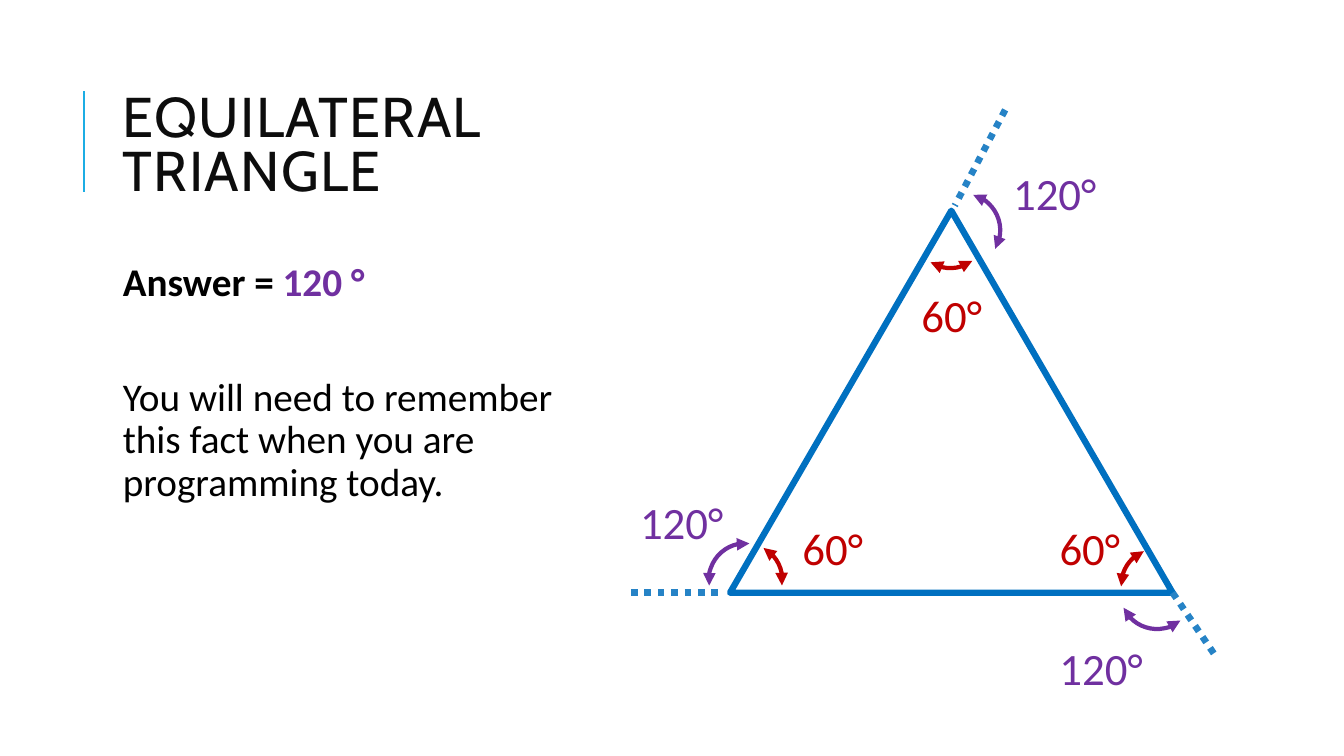
from lxml import etree
from pptx import Presentation
from pptx.dml.color import RGBColor
from pptx.enum.dml import MSO_LINE
from pptx.enum.shapes import MSO_CONNECTOR, MSO_SHAPE
from pptx.enum.text import MSO_ANCHOR, MSO_AUTO_SIZE
from pptx.oxml.ns import qn
from pptx.util import Inches, Pt

STRAIGHT = MSO_CONNECTOR.STRAIGHT
TRIANGLE, ARC = MSO_SHAPE.ISOSCELES_TRIANGLE, MSO_SHAPE.ARC
DOTTED = MSO_LINE.ROUND_DOT
TOP, MIDDLE = MSO_ANCHOR.TOP, MSO_ANCHOR.MIDDLE
FIT, FIXED = MSO_AUTO_SIZE.SHAPE_TO_FIT_TEXT, MSO_AUTO_SIZE.NONE

WHITE = RGBColor(0xFF, 0xFF, 0xFF)
BLACK = RGBColor(0, 0, 0)
INK = RGBColor(0x0D, 0x0D, 0x0D)
ACCENT = RGBColor(0x1C, 0xAD, 0xE4)
BLUE = RGBColor(0x00, 0x70, 0xC0)
DOTS = RGBColor(0x26, 0x83, 0xC6)
RED = RGBColor(0xC0, 0x00, 0x00)
PURPLE = RGBColor(0x70, 0x30, 0xA0)

ARC_SIZE = 0.73
ARC_UNIT = 0.6
INNER_ARC = (280.47, 349.67)
OUTER_ARC = (152.5, 257.33)


class SlideBuilder:
    title = {"name": "Cabin", "size": Pt(40)}
    body = {"name": "Calibri", "size": Pt(28)}
    label = {"name": "Calibri", "size": Pt(32)}

    def __init__(self, prs):
        self.shapes = prs.slides.add_slide(prs.slide_layouts[6]).shapes

    def stroke(self, sp, color, width):
        sp.line.color.rgb = color
        sp.line.width = Pt(width)

    def line(self, start, end, color, width, dash=None):
        sp = self.shapes.add_connector(STRAIGHT, *map(Inches, start + end))
        self.stroke(sp, color, width)
        sp.line.dash_style = dash
        etree.SubElement(sp._element.spPr, qn("a:effectLst"))

    def shape(self, kind, box, color, width):
        sp = self.shapes.add_shape(kind, *map(Inches, box))
        sp.shadow.inherit = False
        self.stroke(sp, color, width)
        return sp

    def triangle(self, box):
        sp = self.shape(TRIANGLE, box, BLUE, 4.5)
        sp.fill.solid()
        sp.fill.fore_color.rgb = WHITE

    def angle_arc(self, left, top, rotation, span, color):
        sp = self.shape(ARC, (left, top, ARC_SIZE, ARC_SIZE), color, 3)
        sp.fill.background()
        sp.rotation = rotation
        for i, degrees in enumerate(span):
            sp.adjustments[i] = degrees * ARC_UNIT
        ln = sp.line._get_or_add_ln()
        for end in ("a:headEnd", "a:tailEnd"):
            etree.SubElement(ln, qn(end), type="triangle")

    def text(self, box, paragraphs, style, anchor=TOP, fit=FIXED):
        tf = self.shapes.add_textbox(*map(Inches, box)).text_frame
        tf.word_wrap = True
        tf.auto_size = fit
        tf.vertical_anchor = anchor
        for i, (layout, runs) in enumerate(paragraphs):
            p = tf.add_paragraph() if i else tf.paragraphs[0]
            for key, value in layout.items():
                setattr(p, key, value)
            for words, color, bold in runs:
                r = p.add_run()
                r.text = words
                for key, value in {**style, "bold": bold}.items():
                    setattr(r.font, key, value)
                r.font.color.rgb = color
        return tf

    def heading(self, box, words):
        layout = {"line_spacing": 0.8}
        tf = self.text(box, [(layout, [(words, INK, False)])], self.title, MIDDLE)
        tf.paragraphs[0].runs[0].font._element.set("spc", "100")

    def angle_label(self, left, top, width, words, color):
        self.text((left, top, width, 0.64), [({}, [(words, color, False)])],
                  self.label, fit=FIT)


def main():
    prs = Presentation()
    prs.slide_width, prs.slide_height = Inches(13.33), Inches(7.5)
    s = SlideBuilder(prs)

    s.line((0.83, 1.9), (0.83, 0.9), ACCENT, 1.5)
    s.heading((1.12, 0.52, 4.8, 1.9), "EQUILATERAL TRIANGLE")
    s.text((1.12, 2.47, 4.8, 4.11), [
        ({"line_spacing": 1.08, "space_after": Pt(2)},
         [("Answer = ", BLACK, True), ("120 °", PURPLE, True)]),
        ({"line_spacing": 0.9, "space_before": Pt(50), "space_after": Pt(2)},
         [("You will need to remember this fact when you are programming today.",
           BLACK, False)]),
    ], s.body)

    s.triangle((7.24, 2.09, 4.39, 3.79))
    corners = [
        (132.9, (9.06, 1.93), (9.19, 1.92), (9.04, 2.81), (9.95, 1.59)),
        (18.8, (7.03, 5.39), (7.03, 5.39), (7.86, 5.12), (6.25, 4.86)),
        (257.8, (11.12, 5.44), (11.11, 5.51), (10.41, 5.12), (10.41, 6.31)),
    ]
    for rotation, inner, outer, inner_label, outer_label in corners:
        s.angle_arc(*inner, rotation, INNER_ARC, RED)
        s.angle_arc(*outer, rotation, OUTER_ARC, PURPLE)
        s.angle_label(*inner_label, 0.91, "60°", RED)
        s.angle_label(*outer_label, 1.94, "120°", PURPLE)

    extensions = [
        ((6.26, 5.88), (7.12, 5.88)),
        ((11.63, 5.88), (12.05, 6.5)),
        ((9.97, 1.09), (9.47, 2.04)),
    ]
    for start, end in extensions:
        s.line(start, end, DOTS, 4.75, DOTTED)

    prs.save("out.pptx")


if __name__ == "__main__":
    main()
